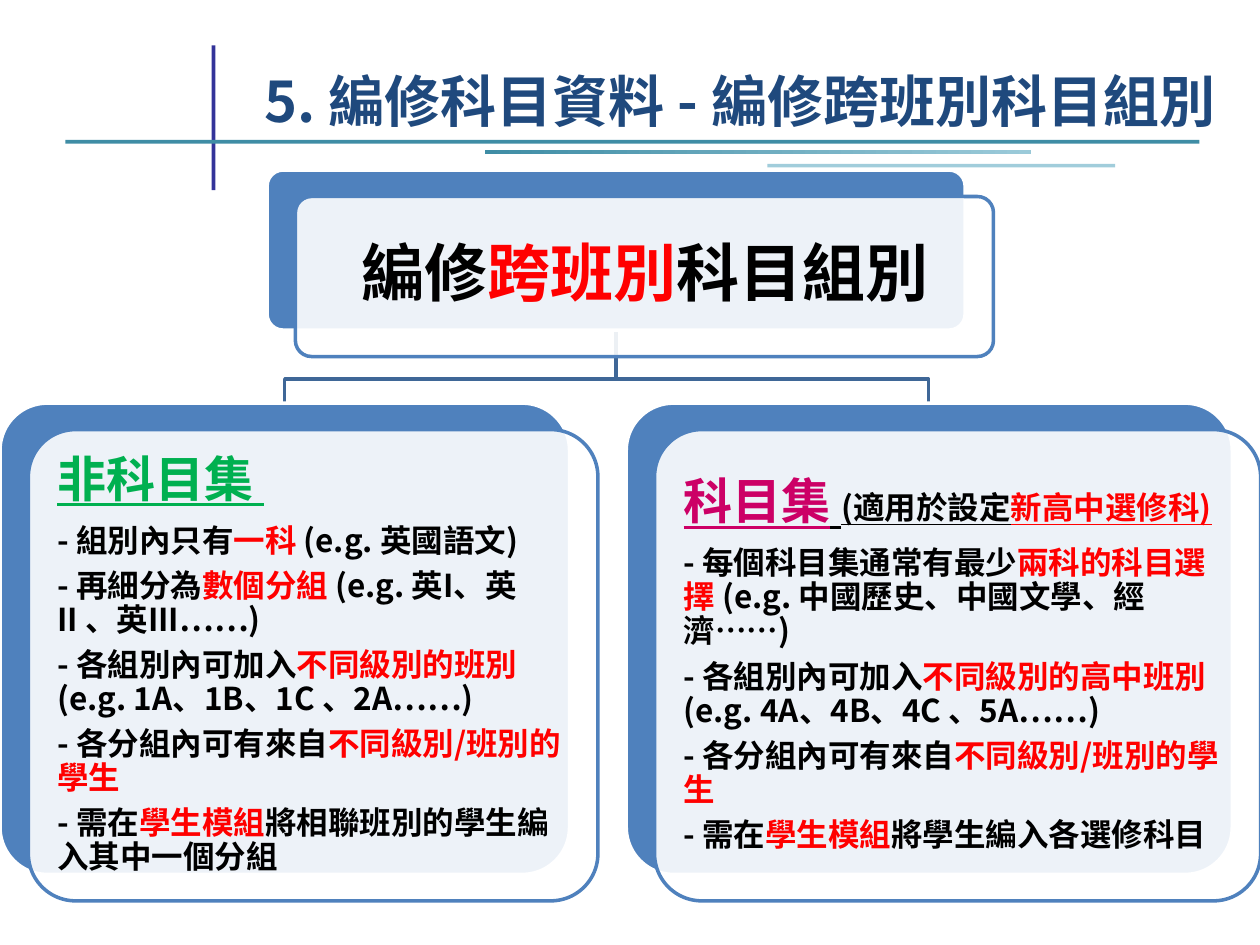
from lxml import etree
from pptx import Presentation
from pptx.dml.color import RGBColor
from pptx.enum.shapes import MSO_SHAPE
from pptx.enum.text import MSO_ANCHOR, PP_ALIGN
from pptx.oxml.ns import qn
from pptx.util import Inches, Pt

RECT, ROUND = MSO_SHAPE.RECTANGLE, MSO_SHAPE.ROUNDED_RECTANGLE
MIDDLE, BOTTOM = MSO_ANCHOR.MIDDLE, MSO_ANCHOR.BOTTOM
LEFT, CENTER = PP_ALIGN.LEFT, PP_ALIGN.CENTER
COLORS = {
    "navy": "1F497D", "violet": "333399", "teal": "3F8DA5", "pale": "9BCAD9",
    "mist": "A1CDDB", "blue": "4F81BD", "link": "3F6797", "white": "FFFFFF",
    "black": "000000", "red": "FF0000", "green": "00B050", "pink": "CC0066",
}
CJK = "Noto Sans CJK TC"
COLS, ROWS = 100, 75  # grid of the slide


def tone(name):
    return RGBColor.from_string(COLORS[name])


class Deck:
    def __init__(self):
        self.prs = Presentation()
        self.prs.slide_width, self.prs.slide_height = Inches(10), Inches(7.5)
        self.slide = self.prs.slides.add_slide(self.prs.slide_layouts[6])
        self.shapes = self.slide.shapes

    def x(self, col):
        return round(self.prs.slide_width * col / COLS)

    def y(self, row):
        return round(self.prs.slide_height * row / ROWS)

    def area(self, box):
        left, top, width, height = box
        return self.x(left), self.y(top), self.x(width), self.y(height)

    def bar(self, box, color, end=None):
        bar = self.shapes.add_shape(RECT, *self.area(box))
        bar.shadow.inherit = False
        bar.line.fill.background()
        if end:
            bar.fill.gradient()
            bar.fill.gradient_angle = 0
            for stop, name in zip(bar.fill.gradient_stops, (color, end)):
                stop.color.rgb = tone(name)
        else:
            bar.fill.solid()
            bar.fill.fore_color.rgb = tone(color)

    def plate(self, box, fill, line, alpha=None):
        plate = self.shapes.add_shape(ROUND, *self.area(box))
        plate.shadow.inherit = False
        plate.adjustments[0] = 0.1
        plate.fill.solid()
        plate.fill.fore_color.rgb = tone(fill)
        plate.line.color.rgb = tone(line)
        plate.line.width = Pt(2)
        if alpha:
            rgb = plate.fill._xPr.find(".//" + qn("a:srgbClr"))
            etree.SubElement(rgb, qn("a:alpha"), val=str(alpha * 1000))

    def card(self, box, paras, inset, **style):
        left, top, width, height = box
        front = (left + 2.25, top + 2.1, width, height)
        self.plate(box, "blue", "white")
        self.plate(front, "white", "blue", alpha=90)
        inner = (left + 3.35, top + 3.2, width - 2.2, height - 2.2)
        self.text(inner, paras, inset=(inset, inset), spacing=0.9, gap=0.35, **style)

    def branch(self, start, end, bend):
        (col, row), (last, low) = start, end
        path = self.shapes.build_freeform(self.x(col), self.y(row))
        points = [(col, bend), (last, bend), (last, low)]
        path.add_line_segments([(self.x(a), self.y(b)) for a, b in points], close=False)
        line = path.convert_to_shape()
        line.shadow.inherit = False
        line.fill.background()
        line.line.color.rgb = tone("link")
        line.line.width = Pt(2)

    def text(self, box, paras, inset=(0.1, 0.05), anchor=MIDDLE, align=LEFT,
             font=CJK, spacing=1.0, gap=0):
        frame = self.shapes.add_textbox(*self.area(box)).text_frame
        frame.word_wrap = True
        frame.vertical_anchor = anchor
        frame.margin_left = frame.margin_right = Inches(inset[0])
        frame.margin_top = frame.margin_bottom = Inches(inset[1])
        for i, runs in enumerate(paras):
            para = frame.paragraphs[0] if i == 0 else frame.add_paragraph()
            para.alignment = align
            para.line_spacing = spacing
            para.space_after = Pt(round(gap * runs[0][2], 1))
            for run in runs:
                self.run(para, font, *run)

    def run(self, para, font, words, color, size, under=False):
        run = para.add_run()
        run.text = words
        run.font.name = font
        run.font.size = Pt(size)
        run.font.bold = True
        run.font.underline = under
        run.font.color.rgb = tone(color)
        etree.SubElement(run.font._element, qn("a:ea"), typeface=CJK)


def point(start, key, rest=""):
    runs = [("- " + start, "black", 18), (key, "red", 18), (rest, "black", 18)]
    return [run for run in runs if run[0]]


def main():
    deck = Deck()

    # Header rules and title
    deck.bar((16.8, 3.6, 0.3, 11.5), "violet")
    deck.bar((5.2, 11.1, 90, 0.3), "teal")
    deck.bar((38.5, 11.9, 43.3, 0.3), "teal", "pale")
    deck.bar((60.9, 13, 27.6, 0.3), "mist")
    deck.text((20, 2.8, 78.3, 8.3),
              [[("5. 編修科目資料 - 編修跨班別科目組別", "navy", 32)]], anchor=BOTTOM)

    # Branches from the root to both cards
    for col in (73.7, 22.6):
        deck.branch((48.9, 26.2), (col, 32), 30.1)

    # Root card
    root = [("編修", "black", 36), ("跨班別", "red", 36), ("科目組別", "black", 36)]
    deck.card((21.2, 13.5, 55.4, 12.7), [root], 0.15, align=CENTER, font="Karla")

    # Lower cards
    shared = point("各分組內可有來自", "不同級別/班別的學生")
    single = [
        [("非科目集 ", "green", 28, True)],
        point("組別內只有", "一科 ", "(e.g. 英國語文)"),
        point("再細分為", "數個分組 ", "(e.g. 英I、英II 、英III……)"),
        point("各組別內可加入", "不同級別的班別 ", "(e.g. 1A、1B、1C 、2A……)"),
        shared,
        point("需在", "學生模組", "將相聯班別的學生編入其中一個分組"),
    ]
    group = [
        [("科目集", "pink", 28, True), (" ", "black", 28, True),
         ("(適用於設定", "black", 18, True), ("新高中選修科)", "red", 18, True)],
        point("每個科目集通常有最少", "兩科的科目選擇 ", "(e.g. 中國歷史、中國文學、經濟……)"),
        point("各組別內可加入", "不同級別的高中班別", "(e.g. 4A、4B、4C 、5A……)"),
        shared,
        point("需在", "學生模組", "將學生編入各選修科目"),
    ]
    for left, width, paras in ((0, 45.2, single), (49.7, 48.1, group)):
        deck.card((left, 32, width, 37.4), paras, 0.12)

    deck.prs.save("out.pptx")


if __name__ == "__main__":
    main()
